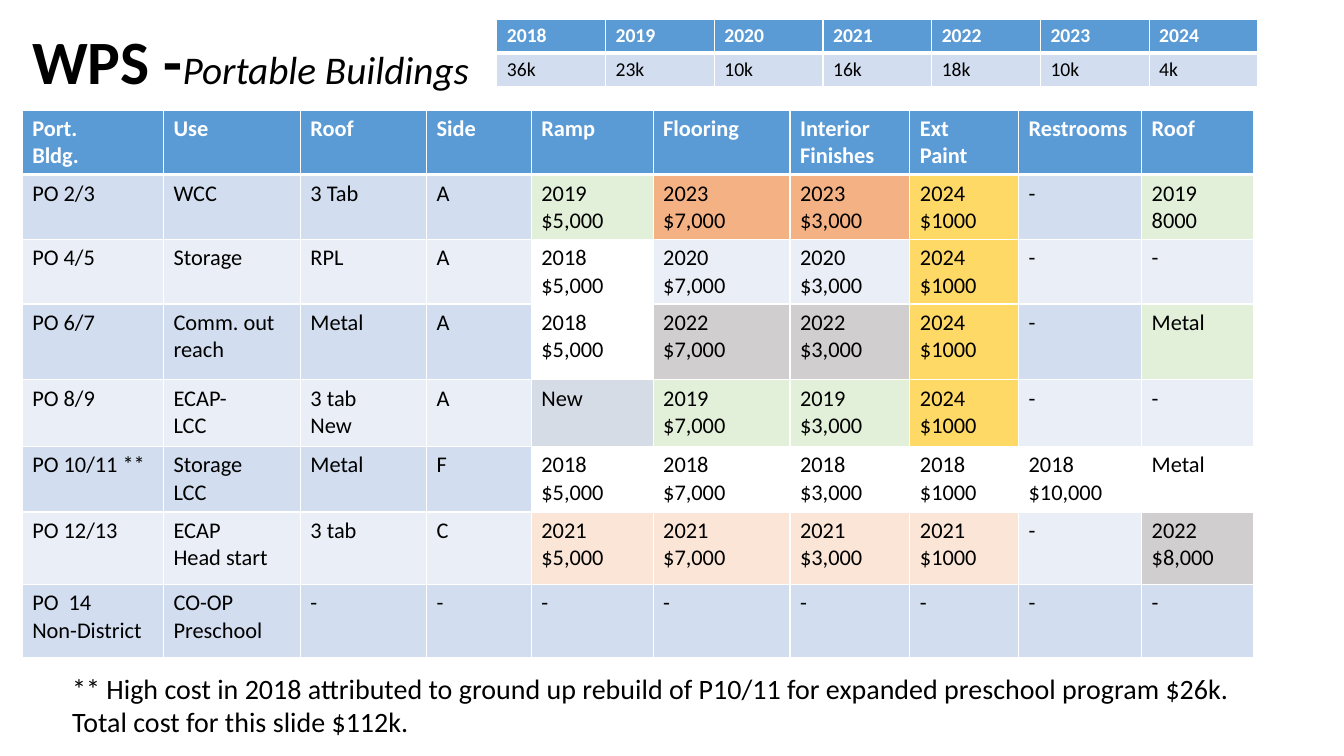
from pptx import Presentation
from pptx.dml.color import RGBColor
from pptx.enum.text import MSO_ANCHOR, MSO_AUTO_SIZE
from pptx.oxml import parse_xml
from pptx.oxml.ns import nsdecls
from pptx.util import Cm, Pt

FONT = "Calibri"
COLOURS = {
    "header": "5B9BD5", "dark band": "D2DEEF", "light band": "EAEFF7",
    "white": "FFFFFF", "black": "000000", "new": "D6DCE5", "done": "E2F0D9",
}
YEAR_COLOURS = {
    "2018": "FFFFFF", "2019": "E2F0D9", "2021": "FBE5D6",
    "2022": "D0CECE", "2023": "F4B183", "2024": "FFD966",
}

BUDGET = [
    ["2018", "2019", "2020", "2021", "2022", "2023", "2024"],
    ["36k", "23k", "10k", "16k", "18k", "10k", "4k"],
]
# Each line of a cell is a paragraph
BUILDINGS = [
    ["Port.\nBldg.", "Use", "Roof", "Side", "Ramp", "Flooring",
     "Interior\nFinishes", "Ext\nPaint", "Restrooms", "Roof"],
    ["PO 2/3", "WCC", "3 Tab", "A", "2019\n$5,000", "2023\n$7,000",
     "2023\n$3,000", "2024\n$1000", "-", "2019\n8000"],
    ["PO 4/5", "Storage", "RPL", "A", "2018\n$5,000", "2020\n$7,000",
     "2020\n$3,000", "2024\n$1000", "-", "-"],
    ["PO 6/7", "Comm. out reach", "Metal", "A", "2018\n$5,000", "2022\n$7,000",
     "2022\n$3,000", "2024\n$1000", "-", "Metal"],
    ["PO 8/9", "ECAP-\nLCC", "3 tab\nNew", "A", "New", "2019\n$7,000",
     "2019\n$3,000", "2024\n$1000", "-", "-"],
    ["PO 10/11 **", "Storage\nLCC", "Metal", "F", "2018\n$5,000", "2018\n$7,000",
     "2018\n$3,000", "2018\n$1000", "2018\n$10,000", "Metal"],
    ["PO 12/13", "ECAP\nHead start", "3 tab", "C", "2021\n$5,000", "2021\n$7,000",
     "2021\n$3,000", "2021\n$1000", "-", "2022\n$8,000"],
    ["PO  14\nNon-District", "CO-OP Preschool"] + ["-"] * 8,
]
BUILDING_WIDTHS = [3.56, 3.45, 3.18, 2.64, 3.07, 3.45, 3.02, 2.74, 3.1, 2.82]
BUILDING_HEIGHTS = [1.63, 1.63, 1.63, 1.91, 1.68, 1.65, 1.83, 1.83]
# Cells without a year that still carry a status colour: (row, column)
STATUS_CELLS = {(3, 9): "done", (4, 4): "new", (5, 9): "white"}


def add_run(paragraph, text, size, colour="black", bold=False, italic=False):
    run = paragraph.add_run()
    run.text = text
    run.font.name = FONT
    run.font.size = Pt(size)
    run.font.bold = bold
    run.font.italic = italic
    run.font.color.rgb = RGBColor.from_string(COLOURS[colour])


def add_lines(text_frame, lines, size, colour="black", bold=False):
    for index, line in enumerate(lines):
        paragraph = text_frame.paragraphs[0] if index == 0 else text_frame.add_paragraph()
        add_run(paragraph, line, size, colour, bold)


def set_borders(cell, bottom_width):
    properties = cell._tc.get_or_add_tcPr()
    for side, width in (("L", 1), ("R", 1), ("T", 1), ("B", bottom_width)):
        properties.append(parse_xml(
            f'<a:ln{side} {nsdecls("a")} w="{Pt(width)}"><a:solidFill>'
            f'<a:srgbClr val="{COLOURS["white"]}"/></a:solidFill></a:ln{side}>'))


def cell_colour(text, row, column, status_cells):
    if row == 0:
        return COLOURS["header"]
    if (row, column) in status_cells:
        return COLOURS[status_cells[row, column]]
    band = COLOURS["dark band" if row % 2 else "light band"]
    return YEAR_COLOURS.get(text.split("\n")[0], band)


def add_table(slide, left, top, widths, heights, content, size, status_cells):
    frame = slide.shapes.add_table(
        len(heights), len(widths), Cm(left), Cm(top), Cm(sum(widths)), Cm(sum(heights)))
    table = frame.table
    for column, width in zip(table.columns, widths):
        column.width = Cm(width)
    for row, height in zip(table.rows, heights):
        row.height = Cm(height)
    for row, texts in enumerate(content):
        is_header = row == 0
        for column, text in enumerate(texts):
            cell = table.cell(row, column)
            add_lines(cell.text_frame, text.split("\n"), size,
                      "white" if is_header else "black", is_header)
            set_borders(cell, 3 if is_header else 1)
            cell.fill.solid()
            cell.fill.fore_color.rgb = RGBColor.from_string(
                cell_colour(text, row, column, status_cells))


def add_title(slide):
    shape = slide.shapes.add_textbox(Cm(0.56), Cm(-0.33), Cm(26.14), Cm(3.89))
    text_frame = shape.text_frame
    text_frame.word_wrap = True
    text_frame.vertical_anchor = MSO_ANCHOR.MIDDLE
    paragraph = text_frame.paragraphs[0]
    paragraph.line_spacing = 0.9
    add_run(paragraph, "WPS -", 44, bold=True)
    add_run(paragraph, "Portable Buildings", 28, italic=True)


def add_footnote(slide):
    shape = slide.shapes.add_textbox(Cm(1.57), Cm(16.79), Cm(29.74), Cm(1.96))
    text_frame = shape.text_frame
    text_frame.word_wrap = False
    text_frame.auto_size = MSO_AUTO_SIZE.SHAPE_TO_FIT_TEXT
    add_lines(text_frame, [
        "** High cost in 2018 attributed to ground up rebuild of P10/11 "
        "for expanded preschool program $26k.",
        "Total cost for this slide $112k.",
    ], 20)


def main():
    presentation = Presentation()
    presentation.slide_width = Cm(33.87)
    presentation.slide_height = Cm(19.05)
    slide = presentation.slides.add_slide(presentation.slide_layouts[6])

    add_title(slide)
    # Work planned for each building
    add_table(slide, 0.56, 2.77, BUILDING_WIDTHS, BUILDING_HEIGHTS,
              BUILDINGS, 16, STATUS_CELLS)
    add_footnote(slide)
    # Yearly totals
    add_table(slide, 12.52, 0.48, [2.74] * 7, [0.85] * 2, BUDGET, 14, {})

    presentation.save("out.pptx")


if __name__ == "__main__":
    main()
